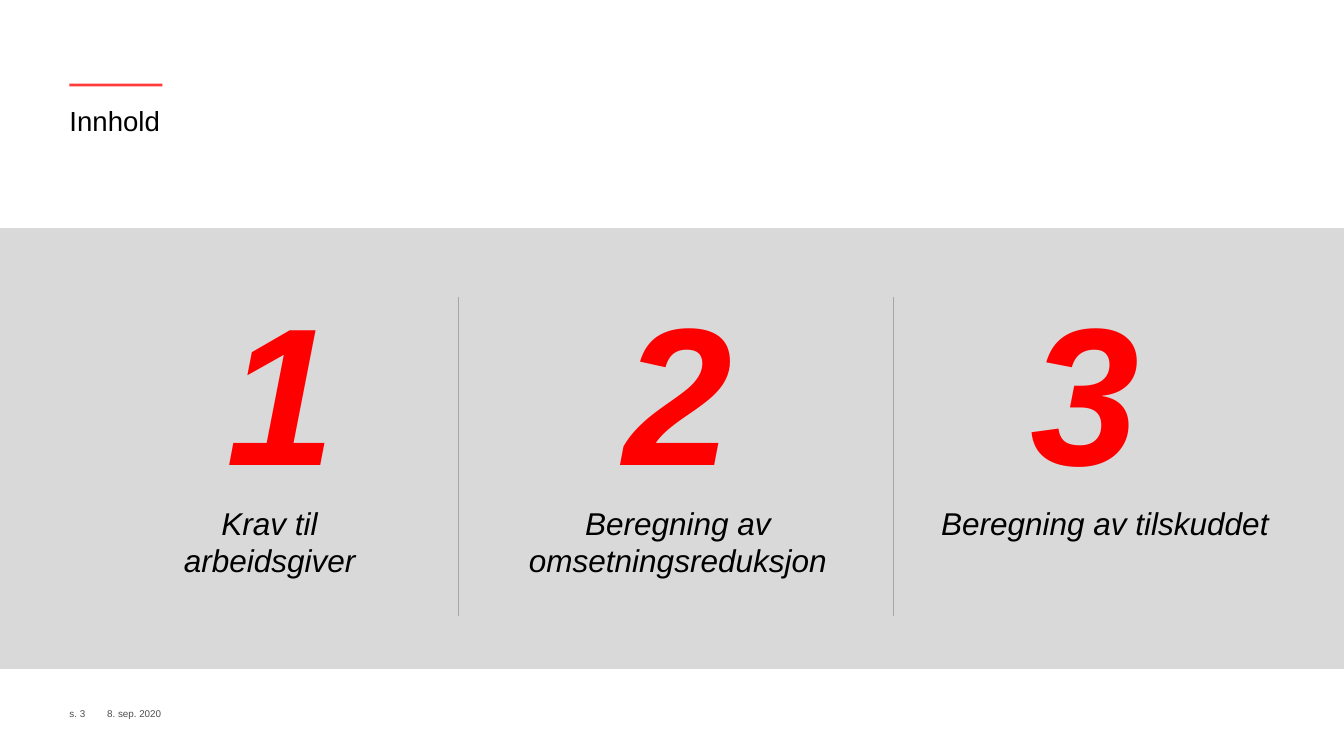
import pptx
import pptx.dml.color
import pptx.enum.shapes
import pptx.enum.text
import pptx.oxml.ns
import pptx.util
from lxml import etree

Cm = pptx.util.Cm
RGBColor = pptx.dml.color.RGBColor
Align = pptx.enum.text.PP_ALIGN
Anchor = pptx.enum.text.MSO_ANCHOR

ACCENT = RGBColor(0xFF, 0x3B, 0x3B)
NUMBER_RED = RGBColor(0xFF, 0x00, 0x00)
BAND_GREY = RGBColor(0xD9, 0xD9, 0xD9)
DIVIDER_GREY = RGBColor(0xA6, 0xA6, 0xA6)
FOOTER_GREY = RGBColor(0x4F, 0x4F, 0x4F)
BLACK = RGBColor(0x00, 0x00, 0x00)

SLIDE_WIDTH, SLIDE_HEIGHT = 48.16, 27.1
MARGIN = 2.49

# number, number left, caption, caption left, caption width
TOPICS = [
    ("1", 7.85, "Krav til\narbeidsgiver", 5.41, 8.51),
    ("2", 22.1, "Beregning av omsetningsreduksjon", 18.26, 12.07),
    ("3", 36.68, "Beregning av tilskuddet", 32.59, 14.02),
]
DIVIDERS = [16.41, 32.0]
FOOTERS = [("s. 3", MARGIN, 1.35), ("8. sep. 2020", 3.84, 3.4)]


def write_text(frame, text, size, color=BLACK, bold=False, italic=False,
               align=Align.LEFT, anchor=Anchor.TOP, inset=None):
    """Fill a text frame, one paragraph for each line of text."""
    frame.word_wrap = True
    frame.vertical_anchor = anchor
    if inset is not None:
        frame.margin_left = frame.margin_right = Cm(inset)
        frame.margin_top = frame.margin_bottom = Cm(inset)
    frame.text = text
    for paragraph in frame.paragraphs:
        paragraph.alignment = align
        font = paragraph.runs[0].font
        font.name = "Arial"
        font.size = pptx.util.Pt(size)
        font.color.rgb = color
        font.bold = bold
        font.italic = italic


class SlideBuilder:
    def __init__(self, presentation):
        self.slide = presentation.slides.add_slide(presentation.slide_layouts[5])

    def title(self, text, left, top, width, height, **style):
        shape = self.slide.shapes.title
        shape.left, shape.top = Cm(left), Cm(top)
        shape.width, shape.height = Cm(width), Cm(height)
        write_text(shape.text_frame, text, **style)

    def text(self, text, left, top, width, height, **style):
        shape = self.slide.shapes.add_textbox(Cm(left), Cm(top), Cm(width), Cm(height))
        write_text(shape.text_frame, text, **style)

    def rectangle(self, left, top, width, height, color):
        shape = self.slide.shapes.add_shape(
            pptx.enum.shapes.MSO_SHAPE.RECTANGLE,
            Cm(left), Cm(top), Cm(width), Cm(height))
        shape.shadow.inherit = False
        shape.fill.solid()
        shape.fill.fore_color.rgb = color
        shape.line.fill.background()

    def vertical_line(self, x, top, bottom, color, weight):
        connector = self.slide.shapes.add_connector(
            pptx.enum.shapes.MSO_CONNECTOR.STRAIGHT,
            Cm(x), Cm(top), Cm(x), Cm(bottom))
        connector.line.color.rgb = color
        connector.line.width = pptx.util.Pt(weight)
        properties = connector._element.spPr
        etree.SubElement(properties, pptx.oxml.ns.qn("a:effectLst"))


def main():
    presentation = pptx.Presentation()
    presentation.slide_width = Cm(SLIDE_WIDTH)
    presentation.slide_height = Cm(SLIDE_HEIGHT)
    builder = SlideBuilder(presentation)

    builder.rectangle(MARGIN, 3.0, 3.33, 0.1, ACCENT)
    builder.rectangle(0, 8.18, SLIDE_WIDTH, 15.8, BAND_GREY)
    builder.title("Innhold", MARGIN, 3.71, 43.18, 2.39, size=28, inset=0)

    for number, number_left, caption, caption_left, caption_width in TOPICS:
        builder.text(number, number_left, 9.55, 3.61, 8.76,
                     size=199, color=NUMBER_RED, bold=True, italic=True)
        builder.text(caption, caption_left, 17.93, caption_width, 3.0,
                     size=32, italic=True, align=Align.CENTER)
    for x in DIVIDERS:
        builder.vertical_line(x, 10.64, 22.07, DIVIDER_GREY, 0.5)
    for text, left, width in FOOTERS:
        builder.text(text, left, 25.35, width, 0.43, size=10,
                     color=FOOTER_GREY, anchor=Anchor.MIDDLE, inset=0)

    presentation.save("out.pptx")


if __name__ == "__main__":
    main()
